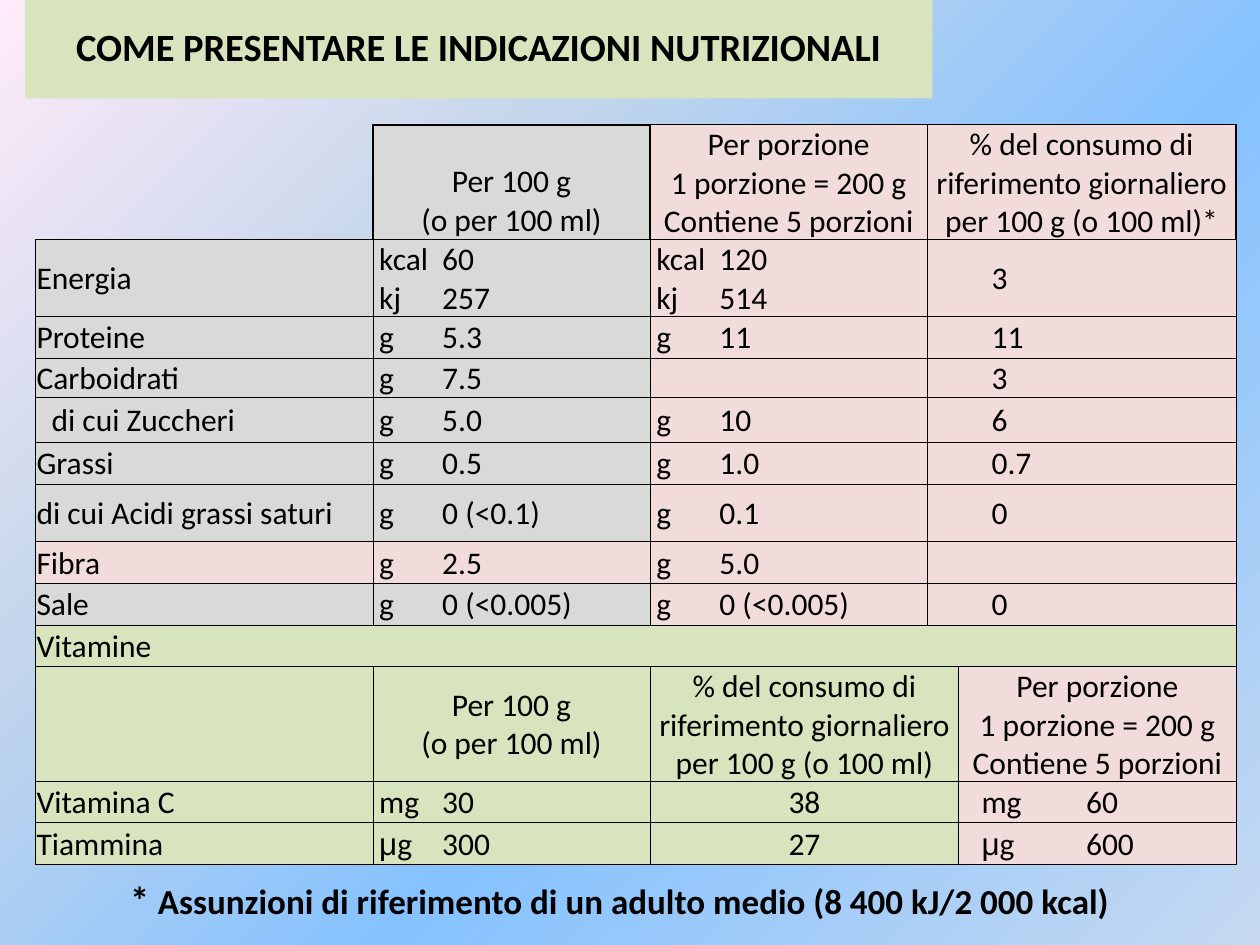
from dataclasses import dataclass
from typing import Any

from lxml.etree import SubElement
from pptx import Presentation
from pptx.dml.color import RGBColor
from pptx.enum.text import MSO_ANCHOR, MSO_AUTO_SIZE, PP_ALIGN
from pptx.oxml import parse_xml
from pptx.oxml.ns import nsdecls, qn
from pptx.util import Inches, Pt


@dataclass(frozen=True)
class Theme:
    ink: str = "000000"
    gray: str = "D9D9D9"
    pink: str = "F2DCDB"
    green: str = "D7E4BD"
    face: str = "Calibri"
    greek: str = "Arial"
    head: int = 22
    note: int = 20
    body: int = 18
    thin: float = 0.5
    thick: float = 1
    stops: tuple = ((0, "C6D9F1", 36), (40, "85C2FF", 100),
                    (70, "C4D6EB", 100), (100, "FFEBFA", 100))


@dataclass(frozen=True)
class Look:
    align: Any = PP_ALIGN.LEFT
    left: float = 0.01
    indent: float = 0
    tab: float = 0


@dataclass(frozen=True)
class Cell:
    text: str
    fill: str
    look: Look
    span: int = 1
    anchor: Any = MSO_ANCHOR.MIDDLE


T = Theme()
PLAIN, INNER = Look(), Look(left=0.13)
MID = Look(align=PP_ALIGN.CENTER)
UNIT, DOSE = Look(indent=0.04), Look(left=0.18, tab=0.83)
COLS = (2.68, 2.2, 2.2, 0.25, 2.2)
LINE, TALL = 0.33, 0.91
HUNDRED = "Per 100 g\n(o per 100 ml)"
SERVING = "Per porzione\n1 porzione = 200 g\nContiene 5 porzioni"
SHARE = "% del consumo di riferimento giornaliero per 100 g (o 100 ml)"
FACTS = (
    (0.6, "Energia", "kcal\t60\nkj\t257", "kcal\t120\nkj\t514", "\t3"),
    (LINE, "Proteine", "g\t5.3", "g\t11", "\t11"),
    (0.31, "Carboidrati", "g\t7.5", "", "\t3"),
    (0.36, "di cui Zuccheri", "g\t5.0", "g\t10", "\t6"),
    (LINE, "Grassi", "g\t0.5", "g\t1.0", "\t0.7"),
    (0.46, "di cui Acidi grassi saturi", "g\t0 (<0.1)", "g\t0.1", "\t0"),
    (LINE, "Fibra", "g\t2.5", "g\t5.0", ""),
    (LINE, "Sale", "g\t0 (<0.005)", "g\t0 (<0.005)", "\t0"),
)
VITAMINS = (("Vitamina C", "mg\t30", "38", "mg\t60"),
            ("Tiammina", "μg\t300", "27", "μg\t600"))


def apply(thing: Any, **values: Any) -> None:
    for name, value in values.items():
        setattr(thing, name, value)


def style(font: Any, size: int, bold: bool = False, face: str = T.face) -> None:
    apply(font, name=face, size=Pt(size), bold=bold)
    font.color.rgb = RGBColor.from_string(T.ink)


def paint(fill: Any, tint: str) -> None:
    if tint:
        fill.solid()
        fill.fore_color.rgb = RGBColor.from_string(tint)
    else:
        fill.background()


def edge(cell: Any, sides: dict[str, float]) -> None:
    props = cell._tc.get_or_add_tcPr()
    for place, side in enumerate("LRTB"):
        width = sides.get(side, 0)
        ink = (f'<a:solidFill><a:srgbClr val="{T.ink}"/></a:solidFill>'
               if width else "<a:noFill/>")
        props.insert(place, parse_xml(
            f'<a:ln{side} {nsdecls("a")} w="{Pt(width)}">{ink}</a:ln{side}>'))


def sides_at(row: int, col: int) -> dict[str, float]:
    sides = dict.fromkeys("LRTB", T.thin)
    special = {
        (0, 0): {"L": 0, "T": 0, "R": T.thick},
        (0, 1): dict.fromkeys("LRTB", T.thick),
        (0, 2): {"L": T.thick, "R": T.thick},
        (0, 3): {"L": T.thick, "R": T.thick},
        (0, 4): {"R": T.thick},
        (1, 1): {"T": T.thick},
    }
    return sides | special.get((row, col), {})


def write(cell: Any, data: Cell) -> None:
    look = data.look
    apply(cell, margin_left=Inches(look.left), margin_right=Inches(0.01),
          margin_top=Inches(0.01), margin_bottom=0, vertical_anchor=data.anchor)
    frame = cell.text_frame
    for count, line in enumerate(data.text.split("\n")):
        para = frame.add_paragraph() if count else frame.paragraphs[0]
        para.alignment = look.align
        props = para._p.get_or_add_pPr()
        if look.indent:
            props.set("marL", str(Inches(look.indent)))
        if look.tab:
            stops = SubElement(props, qn("a:tabLst"))
            SubElement(stops, qn("a:tab"), pos=str(Inches(look.tab)), algn="l")
        style(para.font, T.body)
        lead, greek, rest = line.partition("μ")
        for text, face in ((lead, T.face), (greek, T.greek), (rest, T.face)):
            if text:
                run = para.add_run()
                run.text = text
                style(run.font, T.body, face=face)


def build_rows() -> list[tuple[float, list[Cell]]]:
    low = MSO_ANCHOR.BOTTOM
    rows = [(TALL, [Cell("", "", PLAIN), Cell(HUNDRED, T.gray, MID, anchor=low),
                    Cell(SERVING, T.pink, MID, anchor=low),
                    Cell(SHARE + "*", T.pink, MID, 2, low)])]
    for high, name, base, serving, share in FACTS:
        tint = T.pink if name == "Fibra" else T.gray
        look = INNER if name == "di cui Zuccheri" else PLAIN
        rows.append((high, [Cell(name, tint, look), Cell(base, tint, UNIT),
                            Cell(serving, T.pink, UNIT),
                            Cell(share, T.pink, PLAIN, 2)]))
    rows.append((LINE, [Cell("Vitamine", T.green, PLAIN, 5)]))
    rows.append((TALL, [Cell("", T.green, PLAIN), Cell(HUNDRED, T.green, MID),
                        Cell(SHARE, T.green, MID, 2), Cell(SERVING, T.pink, MID)]))
    for name, base, share, serving in VITAMINS:
        rows.append((LINE, [Cell(name, T.green, PLAIN), Cell(base, T.green, UNIT),
                            Cell(share, T.green, MID, 2),
                            Cell(serving, T.pink, DOSE)]))
    return rows


def draw_table(slide: Any) -> None:
    rows = build_rows()
    table = slide.shapes.add_table(
        len(rows), len(COLS), Inches(0.28), Inches(0.99),
        Inches(sum(COLS)), Inches(sum(high for high, _ in rows))).table
    apply(table, first_row=False, horz_banding=False)
    for column, width in zip(table.columns, COLS):
        column.width = Inches(width)
    for index, (high, cells) in enumerate(rows):
        table.rows[index].height = Inches(high)
        col = 0
        for data in cells:
            last = col + data.span - 1
            for part in range(col, last + 1):
                cell = table.cell(index, part)
                paint(cell.fill, data.fill)
                edge(cell, sides_at(index, part))
            first = table.cell(index, col)
            if data.span > 1:
                first.merge(table.cell(index, last))
            write(first, data)
            col = last + 1


def draw_ground(slide: Any) -> None:
    fill = slide.background.fill
    fill.gradient()
    grad = slide._element.find(".//" + qn("a:gradFill"))
    for child in list(grad):
        grad.remove(child)
    stops = SubElement(grad, qn("a:gsLst"))
    for place, tint, alpha in T.stops:
        stop = SubElement(stops, qn("a:gs"), pos=str(place * 1000))
        color = SubElement(stop, qn("a:srgbClr"), val=tint)
        if alpha < 100:
            SubElement(color, qn("a:alpha"), val=str(alpha * 1000))
    shade = SubElement(grad, qn("a:path"), path="circle")
    SubElement(shade, qn("a:fillToRect"), l="100000", t="100000")


def draw_line(shape: Any, box: tuple, parts: list[tuple[str, int]]) -> None:
    apply(shape, **dict(zip(("left", "top", "width", "height"), map(Inches, box))))
    apply(shape.text_frame, word_wrap=True,
          auto_size=MSO_AUTO_SIZE.SHAPE_TO_FIT_TEXT)
    para = shape.text_frame.paragraphs[0]
    para.alignment = PP_ALIGN.CENTER
    for text, size in parts:
        run = para.add_run()
        run.text = text
        style(run.font, size, True)


def main() -> None:
    deck = Presentation()
    apply(deck, slide_width=Inches(10), slide_height=Inches(7.5))
    slide = deck.slides.add_slide(deck.slide_layouts[5])
    draw_ground(slide)
    title = slide.shapes.title
    paint(title.fill, T.green)
    draw_line(title, (0.2, 0.13, 7.2, 0.47),
              [("COME PRESENTARE LE INDICAZIONI NUTRIZIONALI", T.head)])
    draw_table(slide)
    note = slide.shapes.add_textbox(0, 0, 0, 0)
    draw_line(note, (0.51, 6.9, 8.82, 0.47), [("* ", T.head), (
        "Assunzioni di riferimento di un adulto medio (8 400 kJ/2 000 kcal)", T.note)])
    deck.save("out.pptx")


if __name__ == "__main__":
    main()
